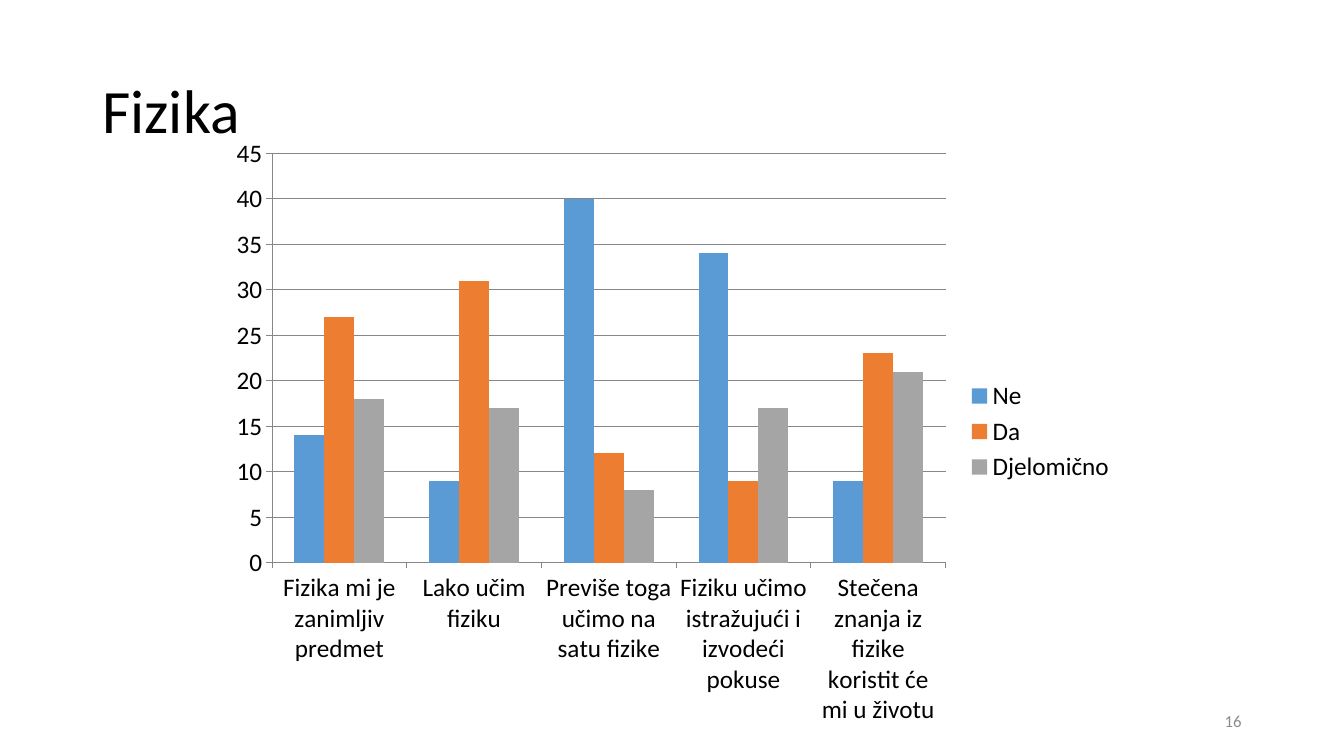
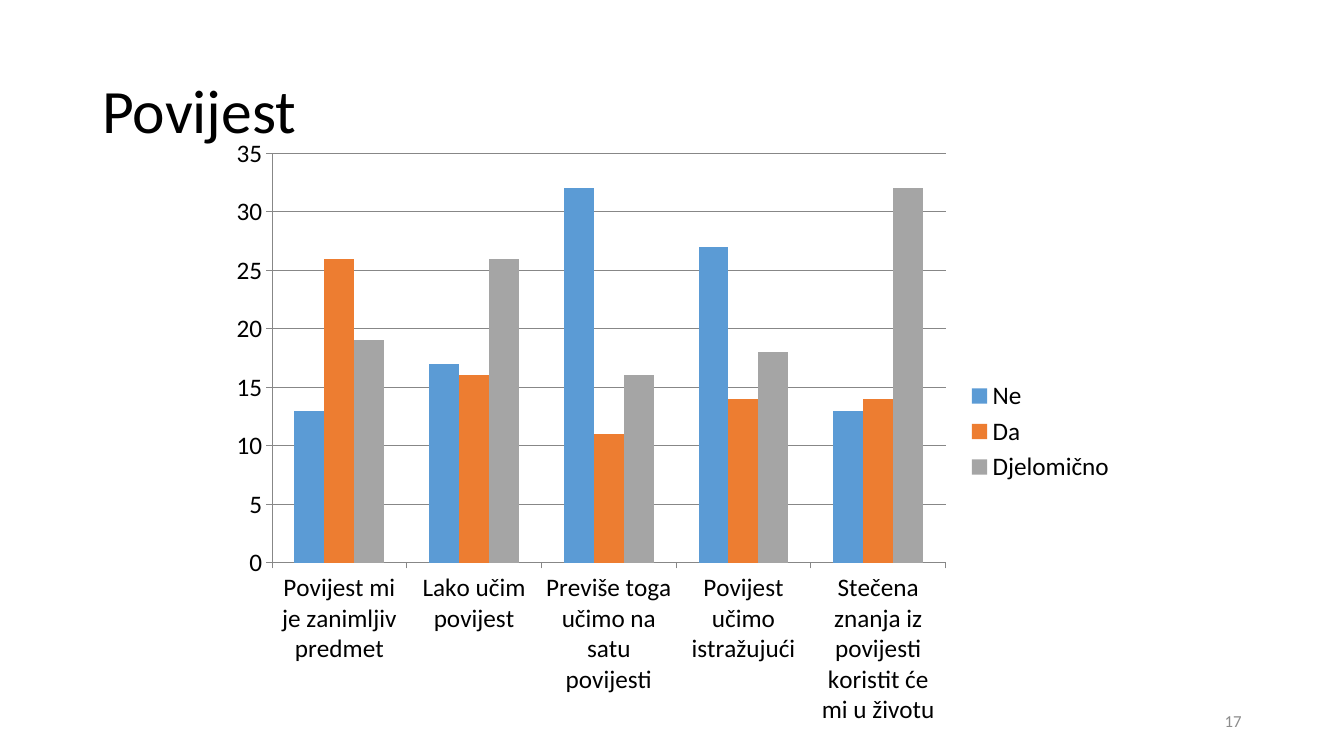
import dataclasses
import typing

import pptx
import pptx.chart.data
import pptx.dml.color
import pptx.enum.chart
import pptx.enum.text
import pptx.util

Pt = pptx.util.Pt
ALIGN = pptx.enum.text.PP_ALIGN
FONT = "Calibri"
BLACK, MUTED, RULE = "000000", "8C8C8C", "878787"
ANSWERS = {"Ne": "5B9BD5", "Da": "ED7D31", "Djelomično": "A5A5A5"}


@dataclasses.dataclass(frozen=True)
class Box:
    left: float
    top: float
    width: float
    height: float

    def lengths(self) -> list[pptx.util.Length]:
        return [Pt(v) for v in dataclasses.astuple(self)]


@dataclasses.dataclass(frozen=True)
class TextStyle:
    box: Box
    size: float
    color: str
    align: ALIGN
    line_spacing: float


@dataclasses.dataclass(frozen=True)
class Survey:
    subject: str
    page: int
    statements: list[str]
    counts: list[list[int]]


TITLE = TextStyle(Box(66, 28.8, 828, 104.4), 44, BLACK, ALIGN.LEFT, 0.9)
PAGE_NUMBER = TextStyle(Box(678, 500.5, 216, 28.75), 12, MUTED, ALIGN.RIGHT, 1.0)
CHART_BOX = Box(156, 90, 648, 436.5)

SURVEYS = [
    Survey(
        "Fizika", 16,
        ["Fizika mi je zanimljiv predmet", "Lako učim fiziku",
         "Previše toga učimo na satu fizike",
         "Fiziku učimo istražujući i izvodeći pokuse",
         "Stečena znanja iz fizike koristit će mi u životu"],
        [[14, 9, 40, 34, 9], [27, 31, 12, 9, 23], [18, 17, 8, 17, 21]],
    ),
    Survey(
        "Povijest", 17,
        ["Povijest mi je zanimljiv predmet", "Lako učim povijest",
         "Previše toga učimo na satu povijesti",
         "Povijest učimo istražujući",
         "Stečena znanja iz povijesti koristit će mi u životu"],
        [[13, 17, 32, 27, 13], [26, 16, 11, 14, 14], [19, 26, 16, 18, 32]],
    ),
]


def rgb(color: str) -> pptx.dml.color.RGBColor:
    return pptx.dml.color.RGBColor.from_string(color)


def apply(target: typing.Any, values: dict[str, typing.Any]) -> None:
    for name, value in values.items():
        setattr(target, name, value)


def format_font(font: typing.Any, size: float, color: str) -> None:
    apply(font, {"name": FONT, "size": Pt(size)})
    font.color.rgb = rgb(color)


def format_line(line: typing.Any) -> None:
    line.width = Pt(0.75)
    line.color.rgb = rgb(RULE)


def add_text(s: typing.Any, text: str, style: TextStyle) -> None:
    tf = s.shapes.add_textbox(*style.box.lengths()).text_frame
    apply(tf, {"word_wrap": True,
               "vertical_anchor": pptx.enum.text.MSO_ANCHOR.MIDDLE})
    p = tf.paragraphs[0]
    apply(p, {"alignment": style.align, "line_spacing": style.line_spacing})
    r = p.add_run()
    r.text = text
    format_font(r.font, style.size, style.color)


def add_survey_chart(s: typing.Any, survey: Survey) -> None:
    data = pptx.chart.data.CategoryChartData()
    data.categories = survey.statements
    for answer, counts in zip(ANSWERS, survey.counts):
        data.add_series(answer, counts)
    kind = pptx.enum.chart.XL_CHART_TYPE.COLUMN_CLUSTERED
    chart = s.shapes.add_chart(kind, *CHART_BOX.lengths(), data).chart
    apply(chart, {"has_title": False, "has_legend": True})
    format_font(chart.font, 18, BLACK)
    apply(chart.legend, {
        "position": pptx.enum.chart.XL_LEGEND_POSITION.RIGHT,
        "include_in_layout": False,
    })
    plot = chart.plots[0]
    apply(plot, {"gap_width": 150, "overlap": 0, "vary_by_categories": False})
    for series, color in zip(plot.series, ANSWERS.values()):
        series.format.fill.solid()
        series.format.fill.fore_color.rgb = rgb(color)
    for axis in (chart.category_axis, chart.value_axis):
        axis.major_tick_mark = pptx.enum.chart.XL_TICK_MARK.OUTSIDE
        format_line(axis.format.line)
    chart.value_axis.has_major_gridlines = True
    format_line(chart.value_axis.major_gridlines.format.line)


def main() -> None:
    prs = pptx.Presentation()
    apply(prs, {"slide_width": Pt(960), "slide_height": Pt(540)})
    for survey in SURVEYS:
        s = prs.slides.add_slide(prs.slide_layouts[6])
        add_text(s, survey.subject, TITLE)
        add_survey_chart(s, survey)
        add_text(s, str(survey.page), PAGE_NUMBER)
    prs.save("out.pptx")


if __name__ == "__main__":
    main()
